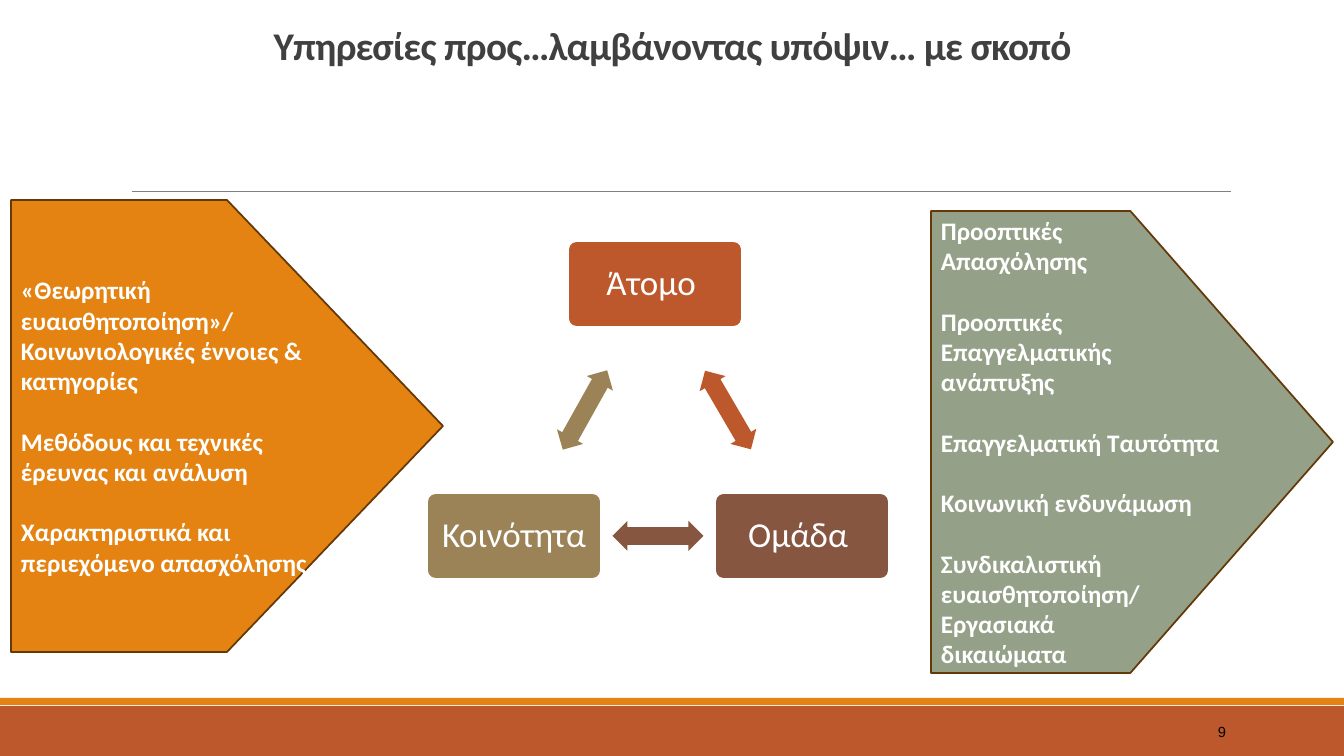
from lxml import etree
from pptx import Presentation
from pptx.dml.color import RGBColor
from pptx.enum.shapes import MSO_CONNECTOR, MSO_SHAPE
from pptx.enum.text import MSO_ANCHOR, PP_ALIGN
from pptx.oxml.ns import qn
from pptx.util import Emu, Pt

LEFT, CENTER, RIGHT = PP_ALIGN.LEFT, PP_ALIGN.CENTER, PP_ALIGN.RIGHT
MIDDLE = MSO_ANCHOR.MIDDLE
RECT, ROUNDED = MSO_SHAPE.RECTANGLE, MSO_SHAPE.ROUNDED_RECTANGLE
PLATE, DOUBLE_ARROW = MSO_SHAPE.PENTAGON, MSO_SHAPE.LEFT_RIGHT_ARROW
STRAIGHT = MSO_CONNECTOR.STRAIGHT

RUST, ORANGE, BROWN, KHAKI, SAGE = "BD582C", "E48312", "865640", "9B8357", "94A088"
WHITE, EDGE = "FFFFFF", "643908"
WIDTH, HEIGHT = 1344, 756


def px(n):
    """Length in pixels, at 100.8 to the inch, as EMU."""
    return Emu(round(n * 914400 / 100.8))


def rgb(value):
    return RGBColor.from_string(value)


class Deck:
    def __init__(self):
        self.prs = Presentation()
        self.prs.slide_width, self.prs.slide_height = px(WIDTH), px(HEIGHT)
        self.slide = self.prs.slides.add_slide(self.prs.slide_layouts[6])

    def shape(self, kind, x, y, w, h, fill, line=None, adj=(), rotation=0):
        s = self.slide.shapes.add_shape(kind, px(x), px(y), px(w), px(h))
        s.shadow.inherit = False
        s.fill.solid()
        s.fill.fore_color.rgb = rgb(fill)
        if line:
            s.line.color.rgb = rgb(line)
            s.line.width = Pt(1.25)
        else:
            s.line.fill.background()
        for i, value in enumerate(adj):
            s.adjustments[i] = value
        s.rotation = rotation
        return s

    def rule(self, x1, x2, y, color):
        c = self.slide.shapes.add_connector(STRAIGHT, px(x1), px(y), px(x2), px(y))
        c.line.color.rgb = rgb(color)
        c.line.width = Pt(0.5)
        etree.SubElement(c._element.spPr, qn("a:effectLst"))

    def box(self, x, y, w, h):
        return self.slide.shapes.add_textbox(px(x), px(y), px(w), px(h))

    def text(self, s, groups, size, color=WHITE, bold=False, font="Calibri",
             align=CENTER, spacing=1.0, inset=10):
        """Fill s with groups of paragraphs, one empty line's height apart."""
        tf = s.text_frame
        tf.word_wrap = True
        tf.vertical_anchor = MIDDLE
        tf.margin_left = tf.margin_right = px(inset)
        tf.margin_top = tf.margin_bottom = px(5)
        lines = [(line, g > 0 and i == 0)
                 for g, group in enumerate(groups) for i, line in enumerate(group)]
        for n, (line, gap) in enumerate(lines):
            p = tf.paragraphs[0] if n == 0 else tf.add_paragraph()
            p.text = line
            p.alignment = align
            p.line_spacing = spacing
            if gap:
                p.space_before = Pt(size * 1.2)
            p.font.name, p.font.size, p.font.bold = font, Pt(size), bold
            p.font.color.rgb = rgb(color)
        return tf


def main():
    deck = Deck()
    deck.shape(RECT, 0, 706, WIDTH, 50, RUST)
    deck.shape(RECT, 0, 698, WIDTH, 7, ORANGE)
    deck.rule(132, 1231, 191, "808080")

    tf = deck.text(deck.box(93, 15, 1159, 66),
                   [["Υπηρεσίες προς…λαμβάνοντας υπόψιν… με σκοπό"]],
                   28, "404040", True, spacing=0.85)
    tf.paragraphs[0].runs[0].font._element.set("spc", "-50")
    deck.text(deck.box(1092, 712, 144, 40), [["9"]], 10.5, "000000",
              font="Arial", align=RIGHT)

    # Each node: label, centre, colour, then the arrow's centre and angle
    cycle = [
        ("Άτομο ", 655, 284, RUST, 728, 410, 59.7),
        ("Ομάδα ", 802, 536, BROWN, 658, 536, 180),
        ("Κοινότητα ", 514, 536, KHAKI, 585, 410, 299.2),
    ]
    node_w, node_h, arrow_w, arrow_h = 174, 86, 91, 30
    for label, x, y, color, ax, ay, angle in cycle:
        s = deck.shape(ROUNDED, x - node_w / 2, y - node_h / 2, node_w, node_h,
                       color, WHITE, [0.1])
        deck.text(s, [[label]], 25, spacing=0.9, inset=12)
        deck.shape(DOUBLE_ARROW, ax - arrow_w / 2, ay - arrow_h / 2, arrow_w, arrow_h,
                   color, adj=[0.6, 0.5], rotation=angle)

    inputs = [
        ["«Θεωρητική ευαισθητοποίηση»/", "Κοινωνιολογικές έννοιες & κατηγορίες"],
        ["Μεθόδους και τεχνικές έρευνας και ανάλυση"],
        ["Χαρακτηριστικά και περιεχόμενο απασχόλησης"],
    ]
    goals = [
        ["Προοπτικές", "Απασχόλησης"],
        ["Προοπτικές Επαγγελματικής ανάπτυξης"],
        ["Επαγγελματική Ταυτότητα"],
        ["Κοινωνική ενδυνάμωση"],
        ["Συνδικαλιστική ευαισθητοποίηση/", "Εργασιακά", "δικαιώματα"],
    ]
    plates = [
        (11, 200, 432, 452, ORANGE, 0.5, inputs),
        (931, 211, 402, 462, SAGE, 0.504, goals),
    ]
    for x, y, w, h, fill, point, groups in plates:
        s = deck.shape(PLATE, x, y, w, h, fill, EDGE, [point])
        deck.text(s, groups, 18, bold=True, align=LEFT)

    deck.prs.save("out.pptx")


if __name__ == "__main__":
    main()
